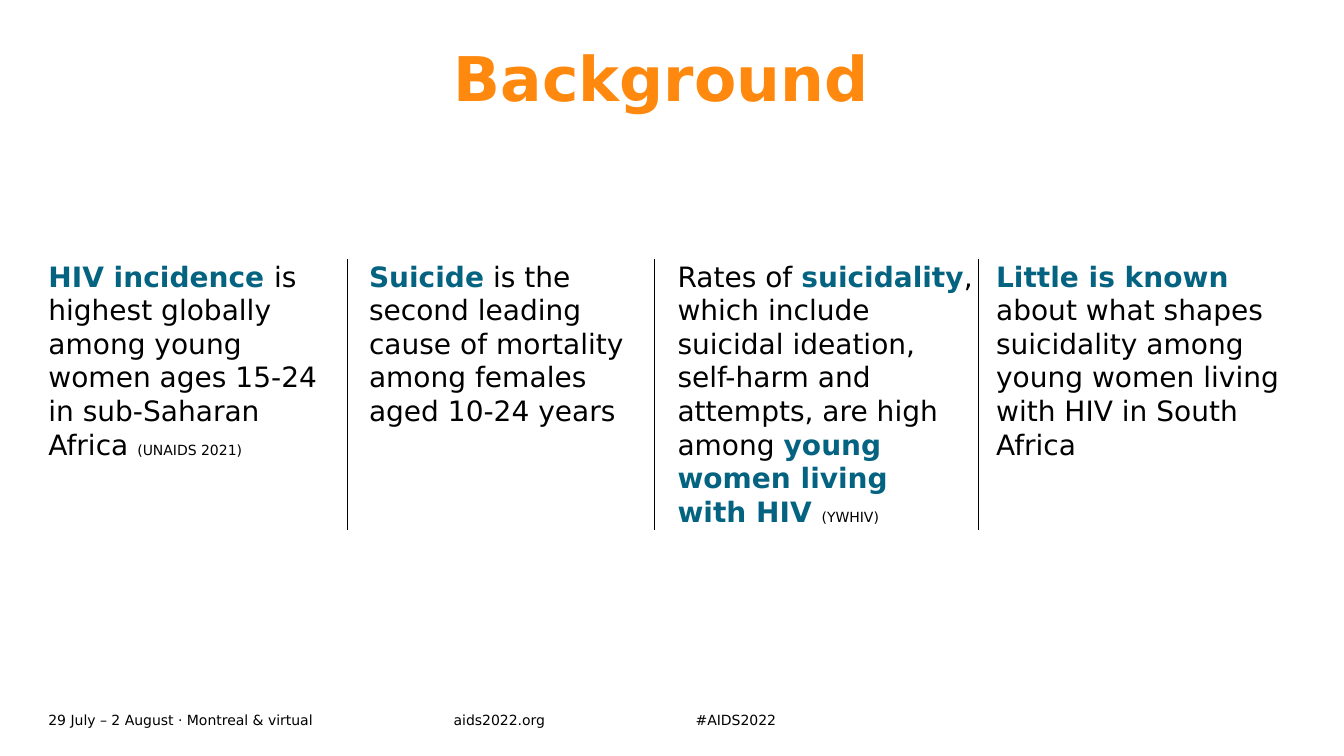
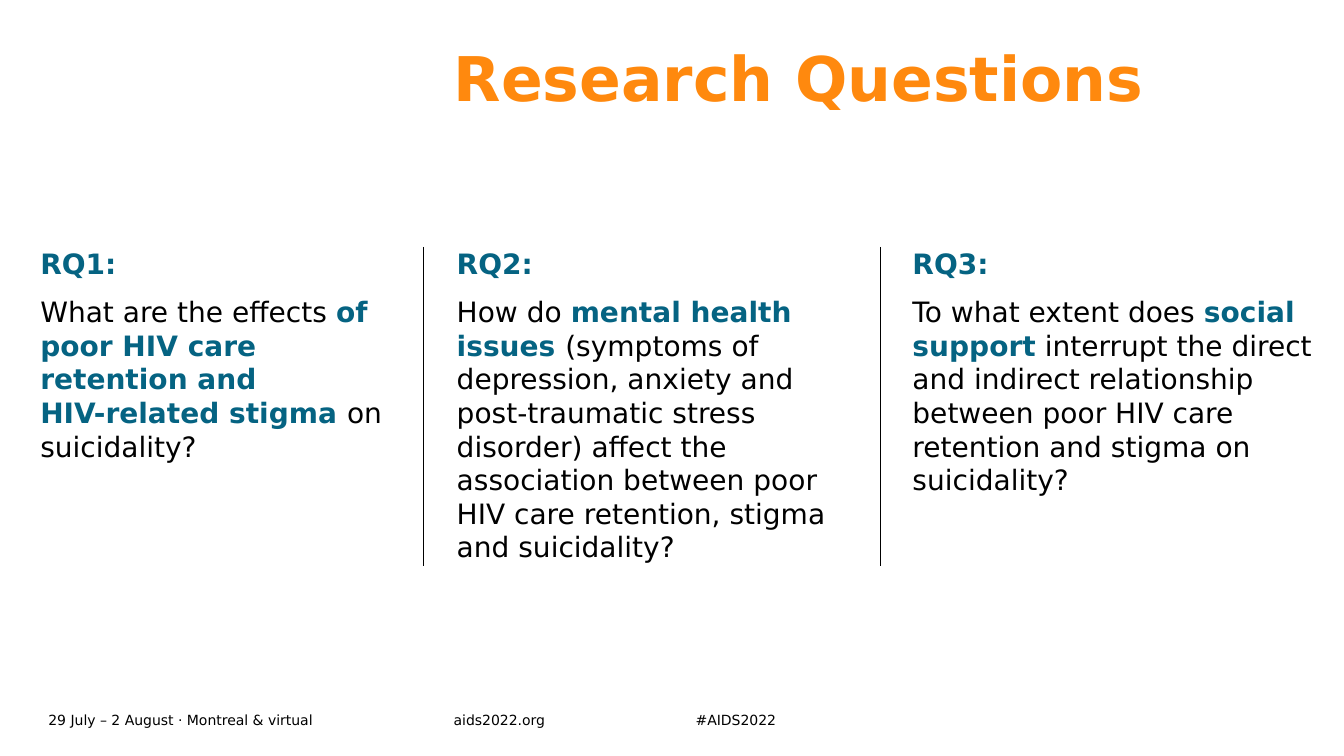
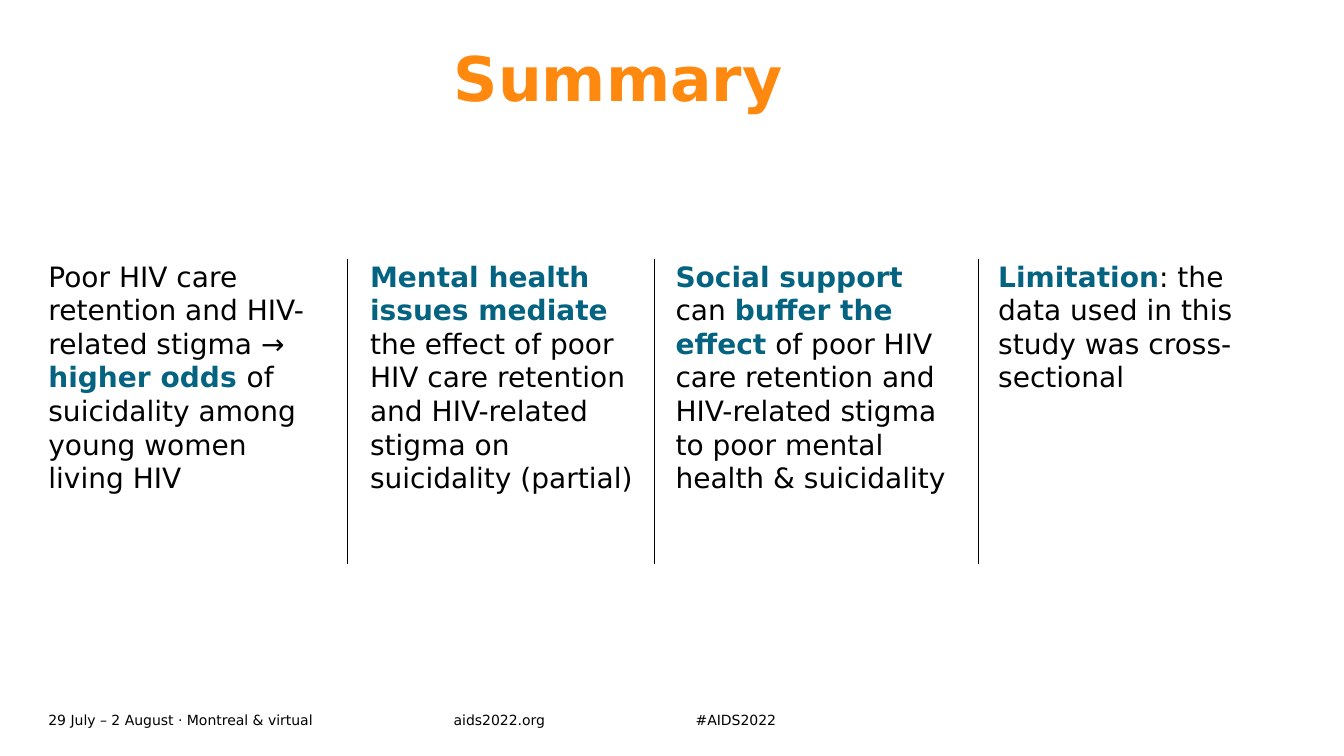
from dataclasses import dataclass

from lxml import etree
from pptx import Presentation
from pptx.dml.color import RGBColor
from pptx.enum import shapes, text
from pptx.oxml import ns
from pptx.util import Inches, Pt

FONT = "DejaVu Sans"
BLACK, TEAL, ORANGE = "000000", "056382", "FF890E"
BODY = {"size": Pt(20), "bold": False}
STRONG = {"size": Pt(20), "bold": True}
SMALL = {"size": Pt(10), "bold": False}
TITLE = {"size": Pt(44), "bold": True}
LINE = 0.336  # height of one body line
GAP = 10  # points before a later paragraph
FOOTERS = [
    (0.48, 4.02, "29 July – 2 August · Montreal & virtual"),
    (4.5, 1.93, "aids2022.org"),
    (6.9, 1.93, "#AIDS2022"),
]


@dataclass
class Column:
    """A text column; *stars* mark the highlighted words."""
    left: float
    width: float
    lines: int
    words: str
    head: str = ""
    note: str = ""


@dataclass
class Page:
    title: str
    top: float
    bottom: float
    rules: list[float]
    columns: list[Column]


def color(code: str) -> RGBColor:
    return RGBColor.from_string(code)


def add_run(para, words: str, style: dict, code: str) -> None:
    """Add words in one style, with a line break at each newline."""
    for i, part in enumerate(words.split("\n")):
        if i:
            para.add_line_break()
        if not part:
            continue
        run = para.add_run()
        run.text = part
        run.font.name = FONT
        run.font.color.rgb = color(code)
        for key, value in style.items():
            setattr(run.font, key, value)


def add_box(slide, left: float, top: float, width: float, height: float):
    """Add a wrapping text box without margins and return its frame."""
    box = slide.shapes.add_textbox(*map(Inches, (left, top, width, height)))
    frame = box.text_frame
    frame.word_wrap = True
    for side in ("left", "top", "right", "bottom"):
        setattr(frame, f"margin_{side}", 0)
    return frame


def add_column(slide, col: Column, top: float) -> None:
    height = col.lines * LINE + (GAP / 72 if col.head else 0)
    frame = add_box(slide, col.left, top, col.width, height)
    frame.auto_size = text.MSO_AUTO_SIZE.SHAPE_TO_FIT_TEXT
    para = frame.paragraphs[0]
    if col.head:
        add_run(para, col.head, STRONG, TEAL)
        para = frame.add_paragraph()
        para.space_before = Pt(GAP)
    for i, part in enumerate(col.words.split("*")):
        add_run(para, part, *((STRONG, TEAL) if i % 2 else (BODY, BLACK)))
    add_run(para, col.note, SMALL, BLACK)


def add_rule(slide, x: float, top: float, bottom: float) -> None:
    rule = slide.shapes.add_connector(
        shapes.MSO_CONNECTOR.STRAIGHT, *map(Inches, (x, top, x, bottom)))
    rule.line.color.rgb = color(BLACK)
    rule.line.width = Pt(0.5)
    etree.SubElement(rule._element.spPr, ns.qn("a:effectLst"))


def add_page(deck, page: Page) -> None:
    slide = deck.slides.add_slide(deck.slide_layouts[6])
    for left, width, words in FOOTERS:
        frame = add_box(slide, left, 7.02, width, 0.24)
        frame.vertical_anchor = text.MSO_ANCHOR.MIDDLE
        add_run(frame.paragraphs[0], words, SMALL, BLACK)
    para = add_box(slide, 4.5, 0.48, 8.35, 1.34).paragraphs[0]
    para.line_spacing = 0.9
    add_run(para, page.title, TITLE, ORANGE)
    for col in page.columns:
        add_column(slide, col, page.top)
    for x in page.rules:
        add_rule(slide, x, page.top, page.bottom)


QUARTERS = [3.45, 6.49, 9.7]
PAGES = [
    Page("Background", 2.57, 5.26, QUARTERS, [
        Column(0.48, 2.79, 6, "*HIV incidence *is highest globally among young "
               "women ages 15-24 in sub-Saharan Africa ", note="(UNAIDS 2021)"),
        Column(3.66, 2.79, 5, "*Suicide* is the second leading cause of "
               "mortality among females aged 10-24 years"),
        Column(6.72, 2.97, 8, "Rates of *suicidality*, which include suicidal "
               "ideation, self-harm and attempts, are high among "
               "*young women living \nwith HIV *", note="(YWHIV)"),
        Column(9.88, 2.97, 6, "*Little is known *about what shapes suicidality "
               "among young women living with HIV in South Africa"),
    ]),
    Page("Research Questions", 2.45, 5.62, [4.2, 8.73], [
        Column(0.4, 3.64, 6, "What are the effects *of poor HIV "
               "care retention and \nHIV-related stigma *on suicidality?",
               head="RQ1:"),
        Column(4.53, 4.02, 9, "How do *mental health issues *(symptoms "
               "of depression, anxiety and post-traumatic stress "
               "disorder) affect the association between poor HIV care "
               "retention, stigma and suicidality?", head="RQ2:"),
        Column(9.05, 4.02, 7, "To what extent does *social support* interrupt "
               "the direct and indirect relationship between poor HIV care "
               "retention and stigma on suicidality?", head="RQ3:"),
    ]),
    Page("Summary", 2.57, 5.6, QUARTERS, [
        Column(0.48, 2.68, 7, "Poor HIV care retention and HIV-related stigma "
               "→ *higher odds *of suicidality among young women living HIV"),
        Column(3.67, 2.68, 7, "*Mental health issues mediate* the effect of "
               "poor HIV care retention and HIV-related stigma on "
               "suicidality (partial)"),
        Column(6.7, 2.68, 7, "*Social support *can *buffer the effect* of poor "
               "HIV care retention and HIV-related stigma to poor mental "
               "health & suicidality"),
        Column(9.9, 2.68, 4, "*Limitation*: the data used in this study was "
               "cross-sectional"),
    ]),
]


def main() -> None:
    deck = Presentation()
    deck.slide_width, deck.slide_height = Inches(13.33), Inches(7.5)
    for page in PAGES:
        add_page(deck, page)
    deck.save("out.pptx")


if __name__ == "__main__":
    main()
